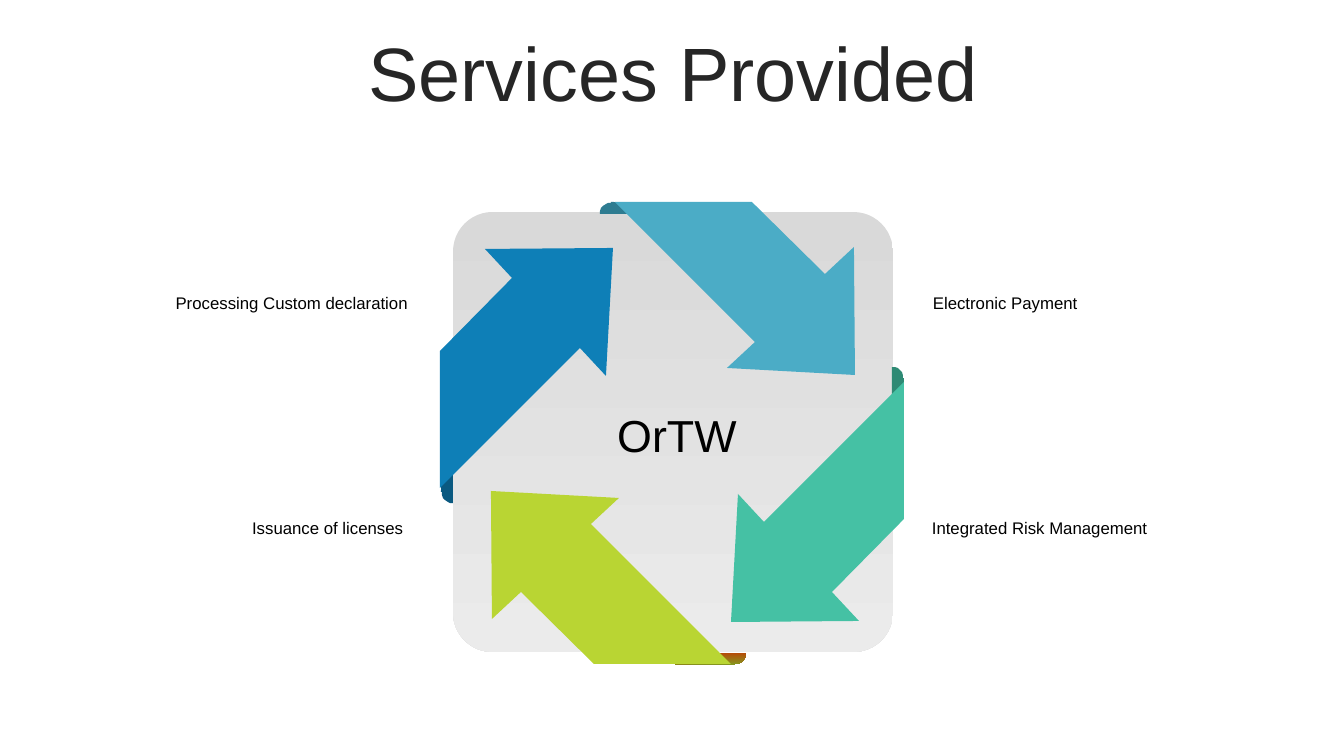
from math import cos, pi, sin

from pptx import Presentation
from pptx.dml.color import RGBColor
from pptx.enum.shapes import MSO_SHAPE
from pptx.enum.text import MSO_ANCHOR, PP_ALIGN
from pptx.util import Pt

SCALE = 914400 / 100.8
ARROW = [(-59, -187), (-66, -59), (-92, -87), (-232, 53),
         (-232, -84), (-160, -157), (-187, -186)]
TAB_HALF_WIDTH, TAB_HALF_LENGTH, TAB_RADIUS = 6, 43, 11
BLADES = [
    ((672, 435), "0E7FB7", (447, 460), ["0A5980"]),
    ((668, 434), "4BACC6", (643, 208), ["2E7C91"]),
    ((672, 435), "45C1A4", (898, 410), ["2E8A74"]),
    ((678, 432), "B9D533", (703, 659), ["B64B08", "849920"]),
]
LABELS = [
    ("Electronic Payment", (923, 288), PP_ALIGN.LEFT),
    ("Integrated Risk Management", (922, 513), PP_ALIGN.LEFT),
    ("Processing Custom declaration", (86, 288), PP_ALIGN.RIGHT),
    ("Issuance of licenses ", (86, 513), PP_ALIGN.RIGHT),
]


def px(length):
    return round(length * SCALE)


def color(value):
    return RGBColor.from_string(value)


def paint(shape, colors):
    shape.shadow.inherit = False
    shape.line.fill.background()
    if len(colors) == 1:
        shape.fill.solid()
        shape.fill.fore_color.rgb = color(colors[0])
        return
    shape.fill.gradient()
    shape.fill.gradient_angle = 270
    for position, (stop, value) in enumerate(zip(shape.fill.gradient_stops, colors)):
        stop.position = position
        stop.color.rgb = color(value)


def add_text(page, box, text, size, align, value="000000", **paragraph_format):
    shape = page.shapes.add_textbox(*map(px, box))
    frame = shape.text_frame
    frame.word_wrap = True
    frame.vertical_anchor = MSO_ANCHOR.MIDDLE
    para = frame.paragraphs[0]
    for name, setting in {"alignment": align, **paragraph_format}.items():
        setattr(para, name, setting)
    span = para.add_run()
    span.text = text
    for name, setting in {"name": "Arial", "size": Pt(size)}.items():
        setattr(span.font, name, setting)
    span.font.color.rgb = color(value)


def tab_outline():
    right, left = TAB_HALF_WIDTH, -TAB_HALF_WIDTH
    angles = [step * pi / 12 for step in range(7)]
    bend = [(right - TAB_RADIUS * sin(angle),
             TAB_HALF_LENGTH - TAB_RADIUS * (1 - cos(angle))) for angle in angles]
    return bend + [(left, bend[-1][1])] + [(x, -y) for x, y in reversed(bend)]


def add_outline(page, center, points, quarter_turns, colors):
    for _ in range(quarter_turns):
        points = [(-y, x) for x, y in points]
    placed = [(round(center[0] + x), round(center[1] + y)) for x, y in points]
    builder = page.shapes.build_freeform(*placed[0], scale=SCALE)
    builder.add_line_segments(placed[1:], close=True)
    paint(builder.convert_to_shape(), colors)


def add_cycle(page, box):
    left, top, width, height = box
    panel = page.shapes.add_shape(MSO_SHAPE.ROUNDED_RECTANGLE, *map(px, box))
    panel.adjustments[0] = 0.09
    paint(panel, ["D9D9D9", "EBEBEB"])
    for turns, (arrow_center, arrow_color, tab_center, tab_colors) in enumerate(BLADES):
        add_outline(page, tab_center, tab_outline(), turns, tab_colors)
        add_outline(page, arrow_center, ARROW, turns, [arrow_color])
    add_text(page, (left + 99, top + 190, 250, 65), "OrTW", 32, PP_ALIGN.CENTER)


def add_labels(page, size):
    for text, corner, align in LABELS:
        add_text(page, (*corner, *size), text, 12, align)


def main():
    deck = Presentation()
    deck.slide_width, deck.slide_height = px(1344), px(756)
    page = deck.slides.add_slide(deck.slide_layouts[6])
    add_text(page, (35, 37, 1276, 80), "Services Provided", 54, PP_ALIGN.CENTER,
             "262626", line_spacing=0.9, space_before=Pt(10))
    add_cycle(page, (453, 212, 440, 440))
    add_labels(page, (332, 30))
    deck.save("out.pptx")


if __name__ == "__main__":
    main()
